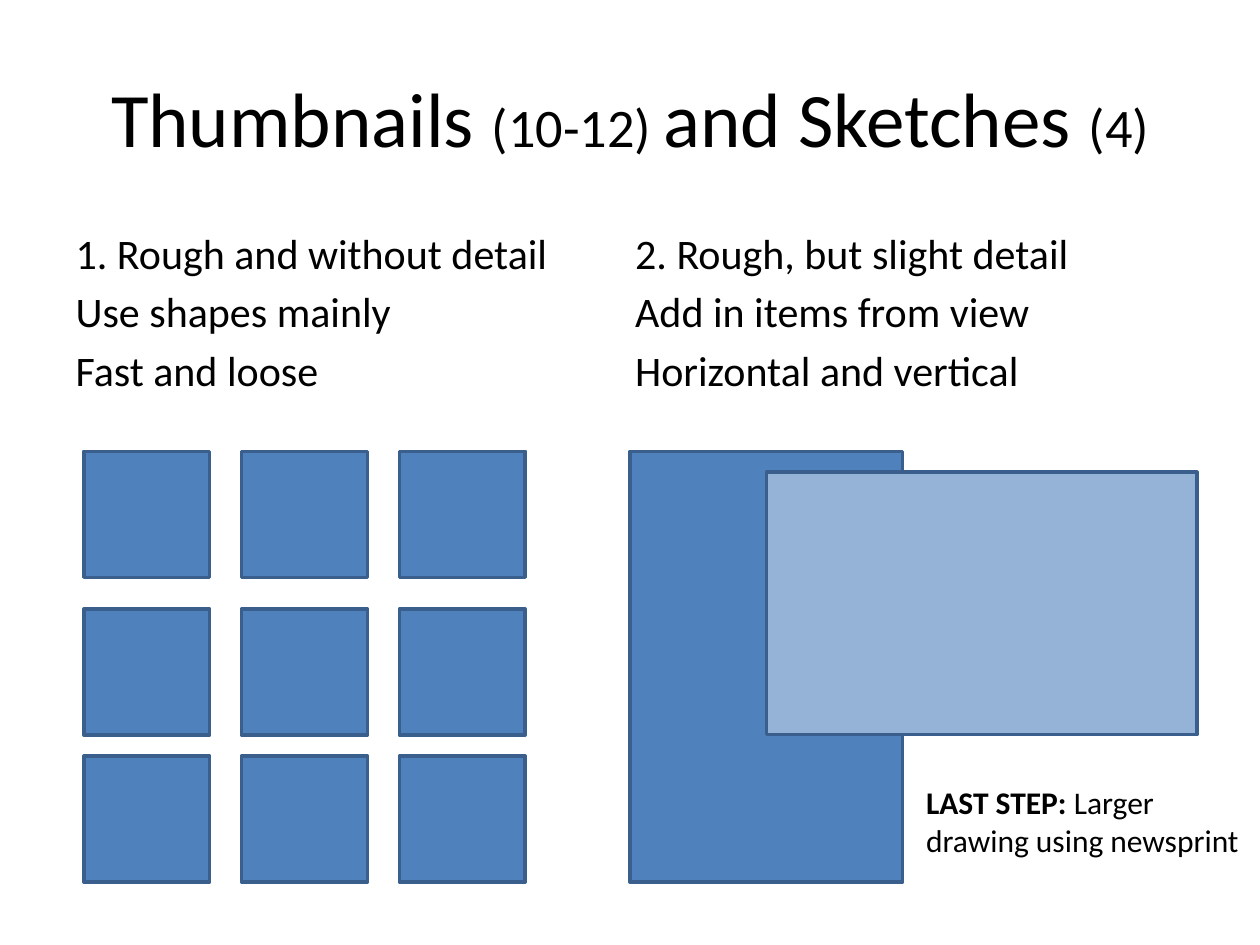
import pptx
import pptx.dml.color
import pptx.enum.shapes
import pptx.enum.text
import pptx.oxml
import pptx.oxml.ns
import pptx.util
from pptx.util import Cm

COLORS = {"text": "000000", "blue": "4F81BD", "light": "95B3D7", "edge": "3A5F8C"}


def rgb(name):
    return pptx.dml.color.RGBColor.from_string(COLORS[name])


def add_run(p, text, size, bold=False):
    r = p.add_run()
    r.text = text
    r.font.name = "Calibri"
    r.font.size = pptx.util.Pt(size)
    r.font.bold = bold
    r.font.color.rgb = rgb("text")


def place(sp, left, top, width, height):
    sp.left, sp.top, sp.width, sp.height = (Cm(v) for v in (left, top, width, height))


def add_box(s, left, top, width, height, fill="blue"):
    sp = s.shapes.add_shape(pptx.enum.shapes.MSO_SHAPE.RECTANGLE,
                            Cm(left), Cm(top), Cm(width), Cm(height))
    sp.shadow.inherit = False
    sp.fill.solid()
    sp.fill.fore_color.rgb = rgb(fill)
    sp.line.color.rgb = rgb("edge")
    sp.line.width = pptx.util.Pt(2)


def fill_title(sp, left, top, width, height):
    place(sp, left, top, width, height)
    tf = sp.text_frame
    tf.vertical_anchor = pptx.enum.text.MSO_ANCHOR.MIDDLE
    p = tf.paragraphs[0]
    p.alignment = pptx.enum.text.PP_ALIGN.CENTER
    for text, size in (("Thumbnails ", 44), ("(10-12) ", 31),
                       ("and Sketches ", 44), ("(4)", 31)):
        add_run(p, text, size)


def fill_list(sp, lines, left, top, width, height):
    """Write the lines as an unbulleted list with a hanging indent."""
    place(sp, left, top, width, height)
    tf = sp.text_frame
    for i, line in enumerate(lines):
        p = tf.paragraphs[0] if i == 0 else tf.add_paragraph()
        add_run(p, line, 24)
        pPr = p._p.get_or_add_pPr()
        pPr.set("marL", str(Cm(0.95)))
        pPr.set("indent", str(-Cm(0.95)))
        pPr.append(pptx.oxml.parse_xml(
            "<a:buNone %s/>" % pptx.oxml.ns.nsdecls("a")))


def add_thumbnails(s, left, top):
    """Draw a 3 by 3 grid whose last row sits slightly closer."""
    for row in (0, 3.18, 6.14):
        for col in range(3):
            add_box(s, left + col * 3.18, top + row, 2.54, 2.54)


def add_sketches(s, left, top):
    """Draw a vertical sheet overlapped by a horizontal one."""
    add_box(s, left, top, 5.5, 8.68)
    add_box(s, left + 2.75, top + 0.42, 8.68, 5.29, "light")


def add_last_step(s, left, top, width, height):
    sp = s.shapes.add_textbox(Cm(left), Cm(top), Cm(width), Cm(height))
    tf = sp.text_frame
    tf.word_wrap = True
    p = tf.paragraphs[0]
    add_run(p, "LAST STEP: ", 18, bold=True)
    add_run(p, "Larger drawing using newsprint", 18)


def main():
    prs = pptx.Presentation()
    prs.slide_width, prs.slide_height = Cm(25.4), Cm(19.05)
    s = prs.slides.add_slide(prs.slide_layouts.get_by_name("Two Content"))
    title, thumbnails, sketches = s.placeholders
    fill_title(title, 1.27, 0.76, 22.86, 3.18)
    fill_list(thumbnails, ["1. Rough and without detail", "Use shapes mainly",
                           "Fast and loose"], 1.27, 4.45, 11.28, 4.4)
    fill_list(sketches, ["2. Rough, but slight detail", "Add in items from view",
                         "Horizontal and vertical"], 12.55, 4.45, 11.78, 4.4)
    add_thumbnails(s, 1.69, 9.1)
    add_sketches(s, 12.7, 9.1)
    add_last_step(s, 18.42, 15.66, 6.98, 1.8)
    prs.save("out.pptx")


if __name__ == "__main__":
    main()
